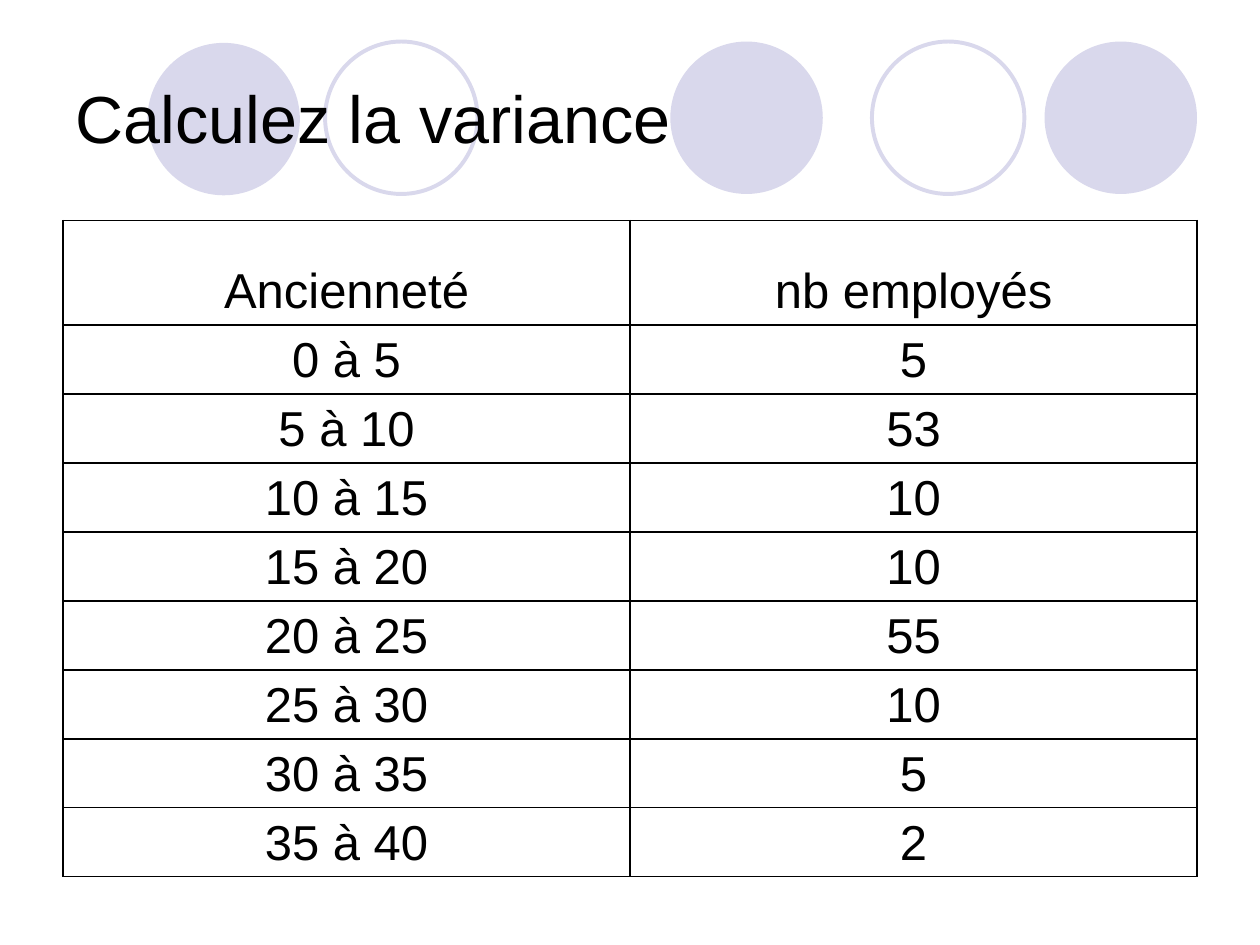
from dataclasses import dataclass

from lxml.etree import SubElement
from pptx import Presentation
from pptx.dml.color import RGBColor
from pptx.enum.shapes import MSO_SHAPE
from pptx.enum.text import MSO_ANCHOR, PP_ALIGN
from pptx.oxml.ns import qn
from pptx.slide import Slide
from pptx.table import _Cell
from pptx.text.text import TextFrame
from pptx.util import Inches, Pt

BLACK = RGBColor(0x00, 0x00, 0x00)
LAVENDER = RGBColor(0xD9, 0xD8, 0xEC)
WIDTH, HEIGHT = Inches(10), Inches(7.5)
MARGIN = Inches(0.5)
CONTENT_W = WIDTH - 2 * MARGIN
DIAMETER = Inches(1.21)
TABLE_TOP, TABLE_H, HEADER_H = Inches(1.75), Inches(5.1), Inches(0.83)
ROWS = [
    ("Ancienneté", "nb employés"),
    ("0 à 5", "5"),
    ("5 à 10", "53"),
    ("10 à 15", "10"),
    ("15 à 20", "10"),
    ("20 à 25", "55"),
    ("25 à 30", "10"),
    ("30 à 35", "5"),
    ("35 à 40", "2"),
]


@dataclass(frozen=True)
class Circle:
    """A header circle, solid or outlined."""

    left: float
    top: float
    solid: bool


CIRCLES = [
    Circle(5.32, 0.33, True),
    Circle(8.29, 0.33, True),
    Circle(1.17, 0.34, True),
    Circle(6.92, 0.33, False),
    Circle(2.58, 0.33, False),
]


def write(tf: TextFrame, text: str, *, size: int, align: PP_ALIGN = PP_ALIGN.LEFT) -> None:
    """Write one formatted paragraph into a text frame."""
    p = tf.paragraphs[0]
    p.alignment = align
    r = p.add_run()
    r.text = text
    r.font.name = "Arial"
    r.font.size = Pt(size)
    r.font.color.rgb = BLACK


def draw_circle(s: Slide, circle: Circle) -> None:
    """Draw one header circle."""
    sp = s.shapes.add_shape(
        MSO_SHAPE.OVAL, Inches(circle.left), Inches(circle.top), DIAMETER, DIAMETER
    )
    sp.shadow.inherit = False
    if circle.solid:
        sp.fill.solid()
        sp.fill.fore_color.rgb = LAVENDER
        sp.line.fill.background()
    else:
        sp.fill.background()
        sp.line.color.rgb = LAVENDER
        sp.line.width = Pt(2.25)


def draw_title(s: Slide, text: str) -> None:
    """Draw the slide title."""
    sp = s.shapes.add_textbox(MARGIN, Inches(0.3), CONTENT_W, Inches(1.25))
    tf = sp.text_frame
    tf.word_wrap = True
    tf.vertical_anchor = MSO_ANCHOR.MIDDLE
    write(tf, text, size=38)


def add_borders(cell: _Cell) -> None:
    """Give a cell thin black borders and no fill."""
    tcPr = cell._tc.get_or_add_tcPr()
    for side in ("a:lnL", "a:lnR", "a:lnT", "a:lnB"):
        ln = SubElement(tcPr, qn(side), w=str(Pt(1)))
        fill = SubElement(ln, qn("a:solidFill"))
        SubElement(fill, qn("a:srgbClr"), val=str(BLACK))
    cell.fill.background()


def draw_table(s: Slide, rows: list[tuple[str, str]]) -> None:
    """Draw the frequency table with a taller header row."""
    cols = len(rows[0])
    frame = s.shapes.add_table(len(rows), cols, MARGIN, TABLE_TOP, CONTENT_W, TABLE_H)
    table = frame.table
    table.first_row = table.horz_banding = False
    row_h = (TABLE_H - HEADER_H) // (len(rows) - 1)
    for i, values in enumerate(rows):
        table.rows[i].height = row_h if i else HEADER_H
        for j, value in enumerate(values):
            cell = table.cell(i, j)
            cell.margin_top, cell.margin_bottom = Inches(0.03), Inches(0.05)
            cell.vertical_anchor = MSO_ANCHOR.BOTTOM
            write(cell.text_frame, value, size=28, align=PP_ALIGN.CENTER)
            add_borders(cell)


def main() -> None:
    """Build and save the slide."""
    prs = Presentation()
    prs.slide_width, prs.slide_height = WIDTH, HEIGHT
    s = prs.slides.add_slide(prs.slide_layouts[6])
    for circle in CIRCLES:
        draw_circle(s, circle)
    draw_title(s, "Calculez la variance")
    draw_table(s, ROWS)
    prs.save("out.pptx")


if __name__ == "__main__":
    main()
